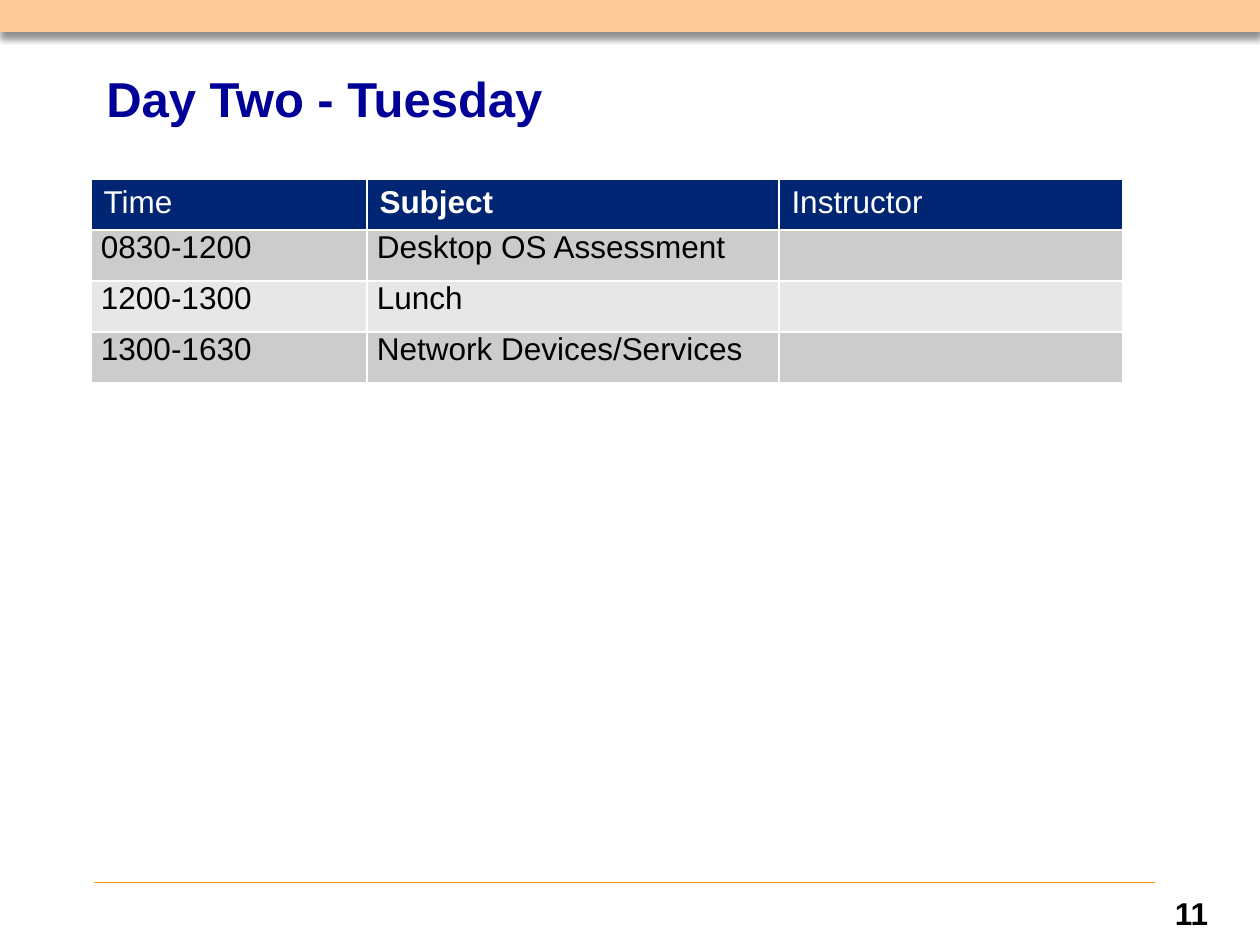
from lxml import etree
from pptx import Presentation
from pptx.dml.color import RGBColor
from pptx.enum.shapes import MSO_CONNECTOR, MSO_SHAPE
from pptx.enum.text import MSO_ANCHOR, PP_ALIGN
from pptx.oxml import parse_xml
from pptx.oxml.ns import qn
from pptx.util import Emu, Pt

RECT = MSO_SHAPE.RECTANGLE
LINE = MSO_CONNECTOR.STRAIGHT
MIDDLE = MSO_ANCHOR.MIDDLE
LEFT, CENTER = PP_ALIGN.LEFT, PP_ALIGN.CENTER
NS = "http://schemas.openxmlformats.org/drawingml/2006/main"

HEAD = ["Time", "Subject", "Instructor"]
ROWS = [
    ["0830-1200", "Desktop OS Assessment", ""],
    ["1200-1300", "Lunch", ""],
    ["1300-1630", "Network Devices/Services", ""],
]


def px(n):
    return Emu(round(n * 914400 / 126))


def rgb(code):
    return RGBColor.from_string(code)


def style(para, size, color, bold=False, align=LEFT):
    para.alignment = align
    for run in para.runs:
        font = run.font
        font.name, font.size, font.bold = "Arial", Pt(size), bold
        font.color.rgb = rgb(color)


def label(slide, box, text, size, color, lead, align=LEFT, anchor=None):
    frame = slide.shapes.add_textbox(*map(px, box)).text_frame
    frame.word_wrap = True
    frame.vertical_anchor = anchor
    frame.text = text
    para = frame.paragraphs[0]
    para.line_spacing = Pt(lead)
    style(para, size, color, True, align)


def banner(slide, box):
    bar = slide.shapes.add_shape(RECT, *map(px, box))
    bar.fill.solid()
    bar.fill.fore_color.rgb = rgb("FFCC99")
    bar.line.fill.background()
    # Soft shadow below the bar
    bar.shadow.inherit = False
    glow = bar._element.spPr.find(qn("a:effectLst"))
    glow.append(parse_xml(
        f'<a:outerShdw xmlns:a="{NS}" blurRad="{Pt(4)}" dist="{Pt(3)}" '
        'dir="5400000" rotWithShape="0"><a:srgbClr val="000000">'
        '<a:alpha val="43000"/></a:srgbClr></a:outerShdw>'))


def edge(cell):
    props = cell._tc.get_or_add_tcPr()
    for side in "LRTB":
        props.append(parse_xml(
            f'<a:ln{side} xmlns:a="{NS}" w="{Pt(1)}"><a:solidFill>'
            f'<a:srgbClr val="FFFFFF"/></a:solidFill></a:ln{side}>'))


def agenda(slide, box, widths):
    grid = [HEAD] + ROWS
    table = slide.shapes.add_table(
        len(grid), len(HEAD), *map(px, box)).table
    for col, width in zip(table.columns, widths):
        col.width = px(width)
    for r, row in enumerate(grid):
        table.rows[r].height = px(box[3] / len(grid))
        for c, text in enumerate(row):
            cell = table.cell(r, c)
            edge(cell)
            cell.fill.solid()
            shade = "CCCCCC" if r % 2 else "E7E7E7"
            cell.fill.fore_color.rgb = rgb(shade if r else "002673")
            if r:
                cell.margin_left = cell.margin_right = px(10)
                cell.margin_top = cell.margin_bottom = 0
            cell.text_frame.text = text
            style(cell.text_frame.paragraphs[0], 18,
                  "000000" if r else "FFFFFF", text == "Subject")


def footer(slide, box):
    x, y, w, h = box
    rule = slide.shapes.add_connector(
        LINE, px(x), px(y), px(x + w - 73), px(y))
    rule.line.color.rgb = rgb("FF9900")
    rule.line.width = Pt(0.5)
    etree.SubElement(rule._element.spPr, qn("a:effectLst"))
    label(slide, (x + w - 73, y, 73, h), "11", 18, "000000", 25, CENTER)


def main():
    deck = Presentation()
    deck.slide_width, deck.slide_height = px(1260), px(945)
    slide = deck.slides.add_slide(deck.slide_layouts[6])
    # Top bar and title
    banner(slide, (0, 0, 1260, 32))
    label(slide, (94, 38, 1061, 130), "Day Two - Tuesday",
          28, "000099", 28, anchor=MIDDLE)
    # Schedule
    agenda(slide, (91, 179, 1032, 204), (276, 412, 344))
    # Rule and page number
    footer(slide, (94, 882, 1134, 21))
    deck.save("out.pptx")


if __name__ == "__main__":
    main()
